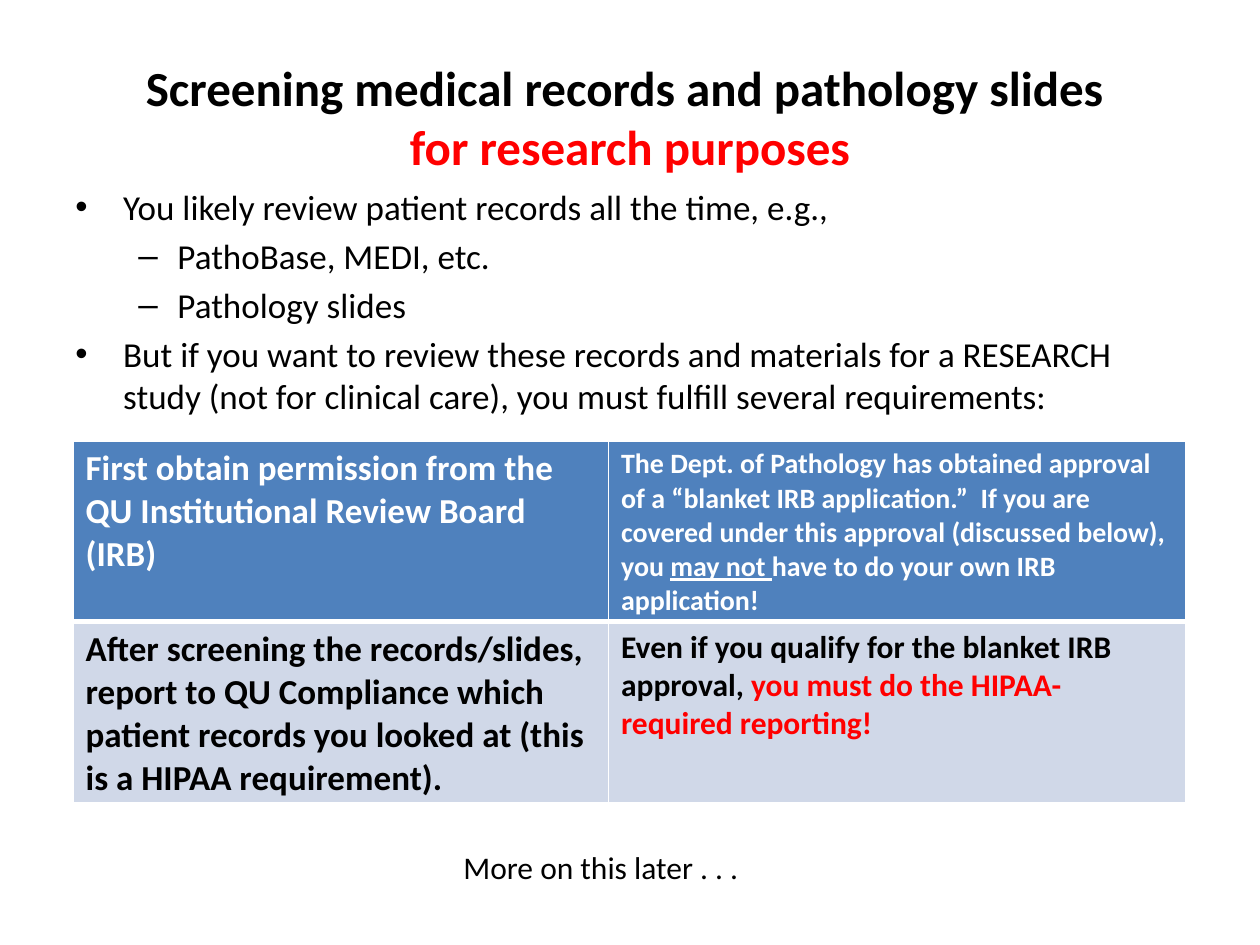
from dataclasses import dataclass

from lxml import etree
from pptx import Presentation
from pptx import util as u
from pptx.dml import color
from pptx.enum import text
from pptx.oxml import ns


@dataclass(frozen=True)
class Theme:
    """Font, colours and type sizes of the slide."""
    font: str = "Calibri"
    ink: str = "000000"
    paper: str = "FFFFFF"
    accent: str = "FF0000"
    header: str = "4F81BD"
    band: str = "D0D8E8"
    title: int = 28
    body: int = 20
    note: int = 18
    small: int = 16


class Deck:
    """Draws elements on one slide, placed on a grid of 100 columns by 75 rows."""

    def __init__(self, theme):
        """Open a blank slide of 10 by 7.5 inches."""
        self.theme = theme
        self.prs = Presentation()
        self.prs.slide_width, self.prs.slide_height = u.Inches(10), u.Inches(7.5)
        self.s = self.prs.slides.add_slide(self.prs.slide_layouts[6])

    def grid(self, *cells):
        """Turn grid columns and rows into lengths."""
        return [int(self.prs.slide_width * c / 100) for c in cells]

    def add_runs(self, p, runs, **style):
        """Fill a paragraph with (text, overrides) runs; None breaks the line."""
        base = dict(name=self.theme.font, ink=self.theme.ink, size=self.theme.body)
        for run in runs:
            if run is None:
                p.add_line_break()
                continue
            r = p.add_run()
            r.text = run[0]
            fmt = {**base, **style, **run[1]}
            r.font.color.rgb = color.RGBColor.from_string(fmt.pop("ink"))
            fmt["size"] = u.Pt(fmt["size"])
            for key, value in fmt.items():
                setattr(r.font, key, value)

    def box(self, at, **frame):
        """Add an empty text box and return its frame."""
        tf = self.s.shapes.add_textbox(*self.grid(*at)).text_frame
        for key, value in {"word_wrap": True, **frame}.items():
            setattr(tf, key, value)
        return tf

    def line(self, at, runs, align=text.PP_ALIGN.LEFT, frame=None, **style):
        """Add a text box with one paragraph."""
        p = self.box(at, **(frame or {})).paragraphs[0]
        p.alignment = align
        self.add_runs(p, runs, **style)

    def bullets(self, at, items):
        """Add a bulleted list of (level, text) items."""
        tf = self.box(at)
        marks = [("•", 0.38, -0.38), ("–", 0.81, -0.31)]
        for i, (level, words) in enumerate(items):
            p = tf.add_paragraph() if i else tf.paragraphs[0]
            p.level = level
            mark, left, hang = marks[level]
            pPr = p._p.get_or_add_pPr()
            pPr.set("marL", str(u.Inches(left)))
            pPr.set("indent", str(u.Inches(hang)))
            before = etree.SubElement(pPr, ns.qn("a:spcBef"))
            etree.SubElement(before, ns.qn("a:spcPct")).set("val", "20000")
            etree.SubElement(pPr, ns.qn("a:buFont")).set("typeface", "Arial")
            etree.SubElement(pPr, ns.qn("a:buChar")).set("char", mark)
            self.add_runs(p, [(words, {})])

    def borders(self, cell, **widths):
        """Draw the cell's edges in the paper colour, widths in points."""
        tcPr = cell._tc.get_or_add_tcPr()
        for i, (side, width) in enumerate(widths.items()):
            ln = etree.Element(ns.qn(f"a:ln{side}"), w=str(u.Pt(width)))
            fill = etree.SubElement(ln, ns.qn("a:solidFill"))
            etree.SubElement(fill, ns.qn("a:srgbClr")).set("val", self.theme.paper)
            tcPr.insert(i, ln)

    def table(self, at, widths, rows):
        """Add a two-row table whose first row is the header."""
        tbl = self.s.shapes.add_table(len(rows), len(widths), *self.grid(*at)).table
        tbl.horz_banding = False
        for col, width in zip(tbl.columns, self.grid(*widths)):
            col.width = width
        looks = [(self.theme.header, self.theme.paper, dict(L=1, R=1, T=1, B=3)),
                 (self.theme.band, self.theme.ink, dict(L=1, R=1, T=3, B=1))]
        for i, (row, (fill, ink, edges)) in enumerate(zip(rows, looks)):
            for j, (size, runs) in enumerate(row):
                cell = tbl.cell(i, j)
                cell.fill.solid()
                cell.fill.fore_color.rgb = color.RGBColor.from_string(fill)
                self.borders(cell, **edges)
                self.add_runs(cell.text_frame.paragraphs[0], runs, size=size, ink=ink, bold=True)


def main():
    """Build the slide and save it."""
    t = Theme()
    deck = Deck(t)
    deck.line((5, 3, 90, 12.5),
              [("Screening medical records and pathology slides ", {}), None,
               ("for research purposes", {"ink": t.accent})],
              align=text.PP_ALIGN.CENTER,
              frame={"vertical_anchor": text.MSO_ANCHOR.MIDDLE}, size=t.title, bold=True)
    deck.bullets((5, 14.2, 90, 33.3), [
        (0, "You likely review patient records all the time, e.g.,"),
        (1, "PathoBase, MEDI, etc."),
        (1, "Pathology slides"),
        (0, "But if you want to review these records and materials for a RESEARCH "
            "study (not for clinical care), you must fulfill several requirements:")])
    deck.table((5.8, 35, 88.3, 28.7), (42.5, 45.8), [
        [(t.body, [("First obtain permission from the QU Institutional Review Board (IRB)", {})]),
         (t.small, [("The Dept. of Pathology has obtained approval of a “blanket IRB "
                     "application.”  If you are covered under this approval "
                     "(discussed below), you ", {}),
                    ("may not ", {"underline": True}),
                    ("have to do your own IRB application!", {})])],
        [(t.body, [("After screening the records/slides, report to QU Compliance which "
                    "patient records you looked at (this is a HIPAA requirement).", {})]),
         (t.note, [("Even if you qualify for the blanket IRB approval, ", {}),
                   ("you must do the HIPAA-required reporting!", {"ink": t.accent})])]])
    deck.line((35.8, 66.8, 24.7, 4), [("More on this later . . .", {})],
              frame={"word_wrap": False, "auto_size": text.MSO_AUTO_SIZE.SHAPE_TO_FIT_TEXT},
              size=t.note)
    deck.prs.save("out.pptx")


if __name__ == "__main__":
    main()
